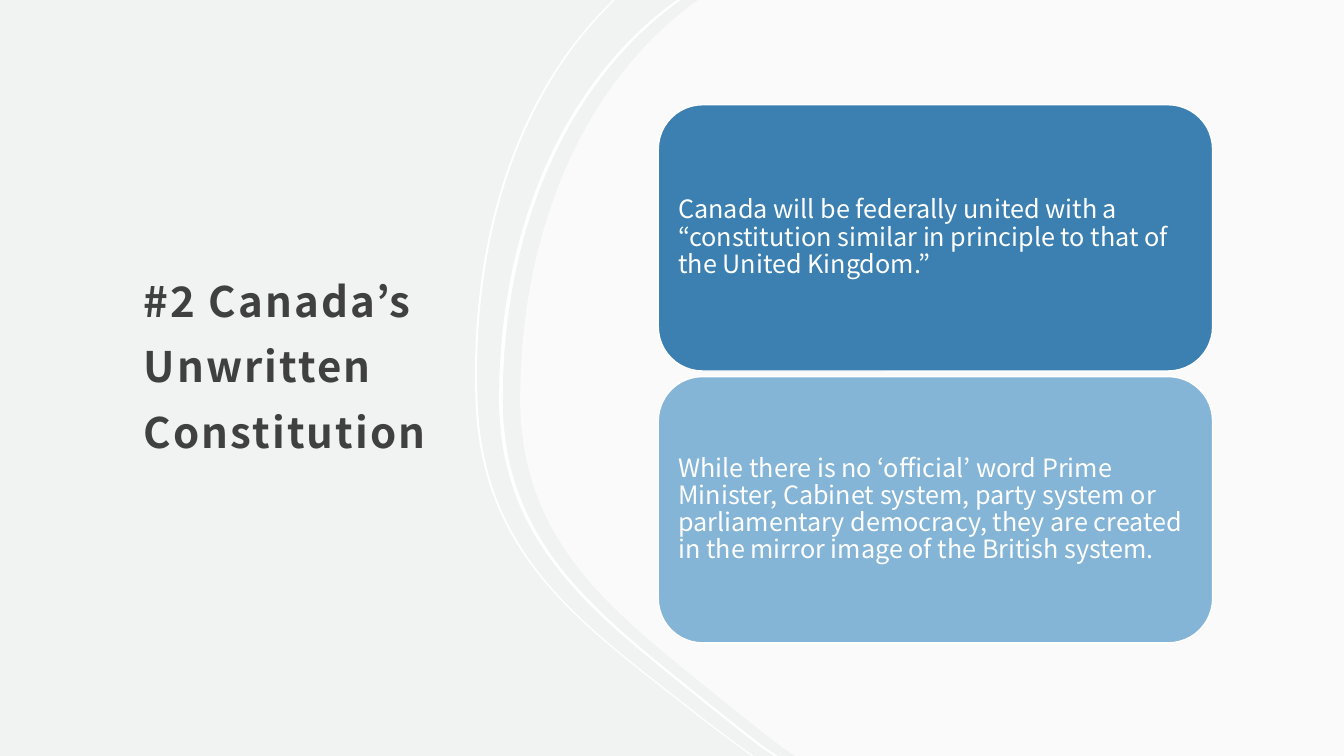
"""Build the slide on Canada's unwritten constitution."""
from dataclasses import dataclass
from typing import Any

from lxml.etree import SubElement
from pptx import Presentation
from pptx.dml.color import RGBColor
from pptx.enum.shapes import MSO_SHAPE as Preset
from pptx.enum.text import MSO_ANCHOR as Anchor, MSO_AUTO_SIZE as AutoSize, PP_ALIGN as Align
from pptx.oxml.ns import qn
from pptx.shapes.autoshape import Shape
from pptx.slide import Slide
from pptx.util import Cm, Pt

Point = tuple[float, float]


@dataclass(frozen=True)
class Theme:
    font: str = "Noto Sans CJK JP"
    background: str = "F0F3F2"
    white: str = "FFFFFF"
    title_color: str = "404040"
    dark_card: str = "3B80B1"
    light_card: str = "84B4D6"
    title_size: float = 30
    card_size: float = 18
    title_spacing: int = 150
    panel_alpha: int = 60000


@dataclass(frozen=True)
class Edge:
    start: Point
    anchor: Point
    curves: tuple[tuple[Point, Point, Point], ...]
    end: Point

    def points(self, shift: float = 0) -> list[Point]:
        bends = [point for curve in self.curves for point in curve]
        return [(x + shift, y) for x, y in (self.start, self.anchor, *bends, self.end)]


@dataclass(frozen=True)
class Stripe:
    edge: Edge
    shift: float
    width: float


@dataclass(frozen=True)
class Card:
    text: str
    color: str


THEME = Theme()
SLIDE_WIDTH, SLIDE_HEIGHT = 33.87, 19.05
CARD_LEFT, CARD_TOP, CARD_WIDTH, CARD_HEIGHT, CARD_PITCH = 16.59, 2.64, 13.97, 6.71, 6.85

PANEL_EDGE = Edge(
    (17.6, 0), (17.55, 0.03),
    (
        ((14.71, 2.08), (13.11, 5.82), (13.11, 10.06)),
        ((13.11, 13.82), (15.67, 15.57), (18.31, 17.73)),
        ((18.8, 18.11), (19.25, 18.49), (19.74, 18.85)),
    ),
    (20.04, 19.05),
)
OUTER_EDGE = Edge(
    (15.44, 0), (15.37, 0.08),
    (
        ((13, 2.39), (11.81, 6.1), (11.99, 10.21)),
        ((12.17, 14.1), (14.78, 15.82), (17.45, 17.93)),
        ((17.93, 18.31), (18.42, 18.67), (18.9, 19.02)),
    ),
    (18.95, 19.05),
)
STRIPES = (Stripe(OUTER_EDGE, 0, 0.05), Stripe(PANEL_EDGE, -0.53, 0.09))
DOWNWARD_CURVES = (1, 4, 7)
UPWARD_CURVES = (13, 16, 19)

TITLE = "#2 Canada’s Unwritten Constitution"
CARDS = (
    Card(
        "Canada will be federally united with a “constitution similar in principle "
        "to that of the United Kingdom.”",
        THEME.dark_card,
    ),
    Card(
        "While there is no ‘official’ word Prime Minister, Cabinet system, party system "
        "or parliamentary democracy, they are created in the mirror image of the British system.",
        THEME.light_card,
    ),
)

FRAME_FORMAT = {"word_wrap": True, "auto_size": AutoSize.NONE, "vertical_anchor": Anchor.MIDDLE}
TITLE_FRAME = FRAME_FORMAT | {
    "margin_left": Cm(0.3), "margin_top": Cm(0.3), "margin_right": Cm(0.3), "margin_bottom": Cm(0.25),
}
CARD_FRAME = FRAME_FORMAT | {
    f"margin_{side}": Cm(0.18) for side in ("left", "top", "right", "bottom")
}
TITLE_PARAGRAPH = {"alignment": Align.LEFT, "line_spacing": 1.3}
CARD_PARAGRAPH = {"alignment": Align.LEFT, "line_spacing": 0.9, "space_after": Pt(6.3)}
TITLE_FONT = {"name": THEME.font, "size": Pt(THEME.title_size), "bold": True}
CARD_FONT = {"name": THEME.font, "size": Pt(THEME.card_size)}


def apply_format(target: Any, values: dict[str, Any]) -> None:
    for name, value in values.items():
        setattr(target, name, value)


def write_text(shape: Shape, text: str, color: str, frame_format: dict[str, Any],
               paragraph_format: dict[str, Any], font_format: dict[str, Any]) -> Any:
    frame = shape.text_frame
    apply_format(frame, frame_format)
    paragraph = frame.paragraphs[0]
    apply_format(paragraph, paragraph_format)
    run = paragraph.add_run()
    run.text = text
    apply_format(run.font, font_format)
    run.font.color.rgb = RGBColor.from_string(color)
    return run


def fill_shape(shape: Shape, color: str) -> None:
    shape.shadow.inherit = False
    shape.fill.solid()
    shape.fill.fore_color.rgb = RGBColor.from_string(color)


def add_title(slide: Slide) -> None:
    title = slide.shapes.title
    apply_format(title, {"left": Cm(3.32), "top": Cm(3.06), "width": Cm(8.38), "height": Cm(11.89)})
    run = write_text(title, TITLE, THEME.title_color, TITLE_FRAME, TITLE_PARAGRAPH, TITLE_FONT)
    run.font._element.set("spc", str(THEME.title_spacing))


def bend_segments(shape: Shape, curve_starts: tuple[int, ...]) -> None:
    lines = list(shape._element.iter(qn("a:lnTo")))
    for start in curve_starts:
        first, second, target = lines[start:start + 3]
        first.tag = qn("a:cubicBezTo")
        for line in (second, target):
            first.append(line[0])
            line.getparent().remove(line)


def add_outline(slide: Slide, points: list[Point], curve_starts: tuple[int, ...]) -> Shape:
    start, *others = [(Cm(x), Cm(y)) for x, y in points]
    builder = slide.shapes.build_freeform(*start)
    builder.add_line_segments(others, close=True)
    shape = builder.convert_to_shape()
    bend_segments(shape, curve_starts)
    fill_shape(shape, THEME.white)
    shape.line.fill.background()
    return shape


def add_panel(slide: Slide) -> None:
    corners = [(SLIDE_WIDTH, SLIDE_HEIGHT), (SLIDE_WIDTH, 0)]
    panel = add_outline(slide, PANEL_EDGE.points() + corners, DOWNWARD_CURVES)
    color = panel._element.spPr.find(qn("a:solidFill"))[0]
    SubElement(color, qn("a:alpha"), val=str(THEME.panel_alpha))


def add_stripe(slide: Slide, stripe: Stripe) -> None:
    left_side = stripe.edge.points(stripe.shift)
    right_side = stripe.edge.points(stripe.shift + stripe.width)
    add_outline(slide, left_side + right_side[::-1], DOWNWARD_CURVES + UPWARD_CURVES)


def add_card(slide: Slide, card: Card, row: int) -> None:
    shape = slide.shapes.add_shape(
        Preset.ROUNDED_RECTANGLE, Cm(CARD_LEFT), Cm(CARD_TOP + row * CARD_PITCH),
        Cm(CARD_WIDTH), Cm(CARD_HEIGHT),
    )
    fill_shape(shape, card.color)
    shape.line.color.rgb = RGBColor.from_string(THEME.white)
    shape.line.width = Pt(1)
    write_text(shape, card.text, THEME.white, CARD_FRAME, CARD_PARAGRAPH, CARD_FONT)


def main() -> None:
    presentation = Presentation()
    apply_format(presentation, {"slide_width": Cm(SLIDE_WIDTH), "slide_height": Cm(SLIDE_HEIGHT)})
    slide = presentation.slides.add_slide(presentation.slide_layouts.get_by_name("Title Only"))
    slide.background.fill.solid()
    slide.background.fill.fore_color.rgb = RGBColor.from_string(THEME.background)
    add_title(slide)
    add_panel(slide)
    for stripe in STRIPES:
        add_stripe(slide, stripe)
    for row, card in enumerate(CARDS):
        add_card(slide, card, row)
    presentation.save("out.pptx")


if __name__ == "__main__":
    main()
